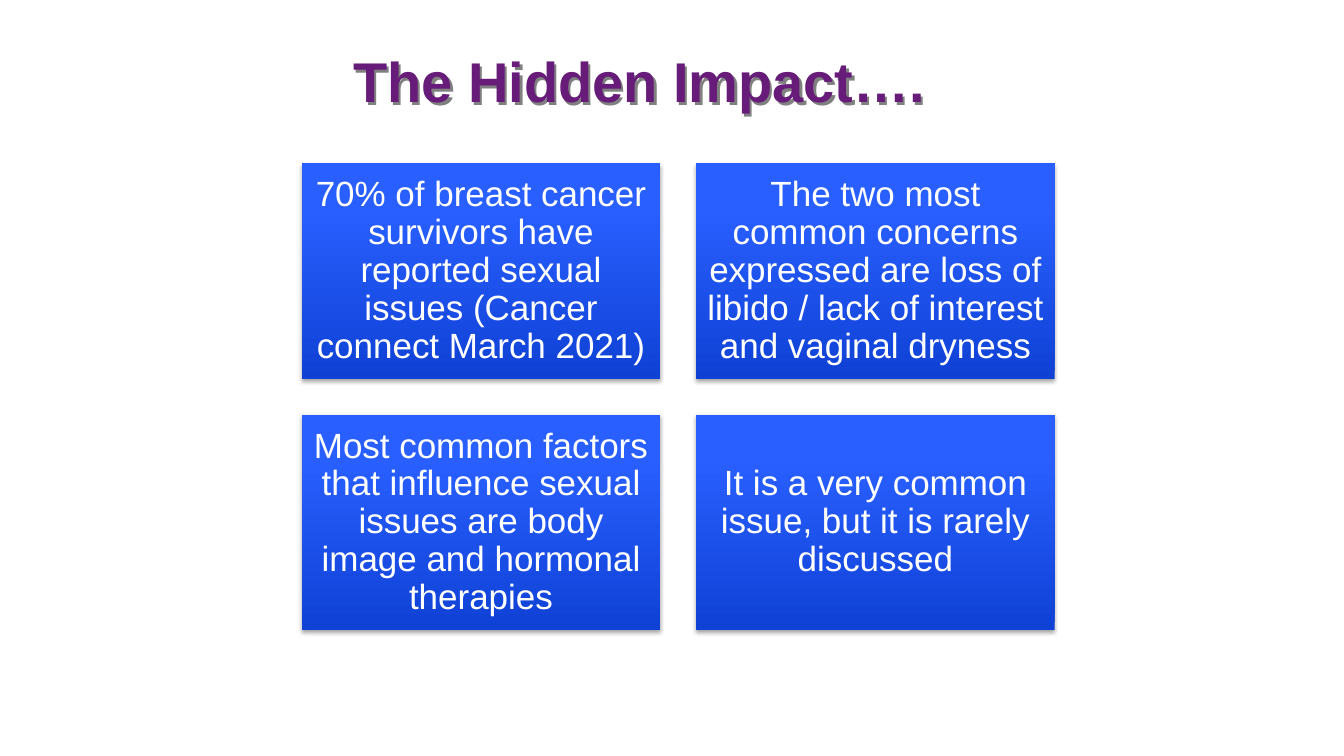
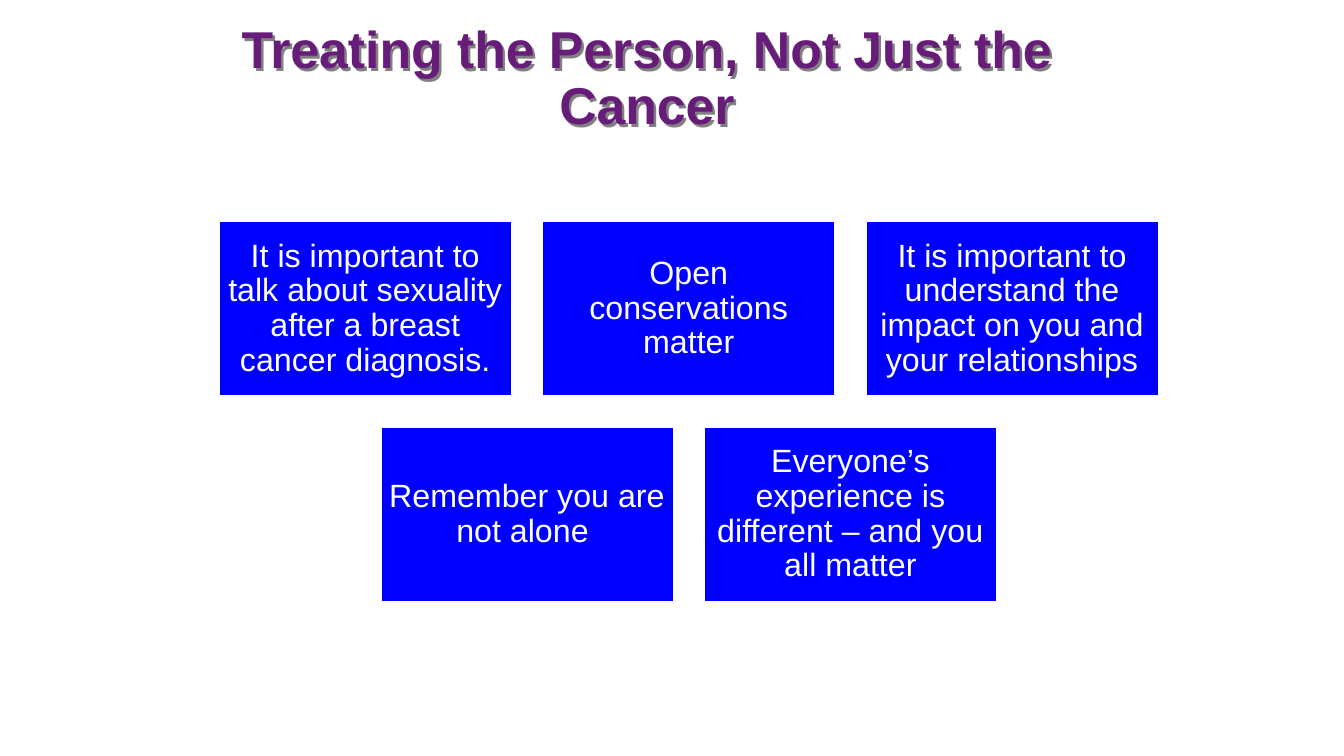
from pptx import Presentation
from pptx.dml.color import RGBColor
from pptx.enum.shapes import MSO_SHAPE as Kind
from pptx.enum.text import MSO_ANCHOR as Anchor, PP_ALIGN as Align
from pptx.oxml import parse_xml as to_xml
from pptx.oxml.ns import nsdecls
from pptx.util import Cm, Pt

PLUM, WHITE, BLUE, BLACK, GREY = "661C78", "FFFFFF", "0000FF", "000000", "808080"
FADE = [(0, "0F41D5"), (80, "295FFF"), (100, "2B60FF")]
TITLE = {"name": "Arial", "bold": True}
BODY = {"name": "Arial", "bold": False}
DECK = [
    {
        "title": "The Hidden Impact…. ", "size": 40, "lead": 1,
        "mid": 17.09, "top": 4.12, "wide": 9.04, "high": 5.43, "gap": 0.9,
        "font": 25, "inset": 0.24, "fade": True,
        "rows": [
            ["70% of breast cancer survivors have reported sexual issues (Cancer connect March 2021)",
             "The two most common concerns expressed are loss of libido / lack of interest and vaginal dryness"],
            ["Most common factors that influence sexual issues are body image and hormonal therapies",
             "It is a very common issue, but it is rarely discussed"],
        ],
    },
    {
        "title": "Treating the Person, Not Just the Cancer", "size": 37, "lead": 0.9,
        "mid": 17.36, "top": 5.56, "wide": 7.41, "high": 4.44, "gap": 0.74,
        "font": 23, "inset": 0.18, "fade": False,
        "rows": [
            ["It is important to talk about sexuality after a breast cancer diagnosis.",
             "Open conservations matter",
             "It is important to understand the impact on you and your relationships"],
            ["Remember you are not alone ",
             "Everyone’s experience is different – and you all matter"],
        ],
    },
]


def write(shape, text, style, size, tone, lead, inset):
    frame = shape.text_frame
    look = {"word_wrap": True, "vertical_anchor": Anchor.MIDDLE,
            "margin_left": Cm(inset), "margin_right": Cm(inset),
            "margin_top": Cm(inset), "margin_bottom": Cm(inset)}
    para = frame.paragraphs[0]
    para.text = text
    flow = {"alignment": Align.CENTER, "line_spacing": lead}
    face = {**style, "size": Pt(size)}
    for part, values in ((frame, look), (para, flow), (para.runs[0].font, face)):
        for key, value in values.items():
            setattr(part, key, value)
    para.runs[0].font.color.rgb = RGBColor.from_string(tone)


def shade(shape, tone, alpha, blur, dist, angle):
    shape.shadow.inherit = False
    shape._element.spPr.find("{*}effectLst").append(to_xml(
        f'<a:outerShdw {nsdecls("a")} blurRad="{Pt(blur)}" dist="{Pt(dist)}" '
        f'dir="{angle * 60000}" algn="tl" rotWithShape="0"><a:srgbClr val="{tone}">'
        f'<a:alpha val="{alpha * 1000}"/></a:srgbClr></a:outerShdw>'))


deck = Presentation()
deck.slide_width, deck.slide_height = Cm(33.87), Cm(19.05)
stops = "".join(f'<a:gs pos="{pos * 1000}"><a:srgbClr val="{tone}"/></a:gs>' for pos, tone in FADE)

for page in DECK:
    slide = deck.slides.add_slide(deck.slide_layouts[6])
    title = slide.shapes.add_textbox(Cm(5.51), Cm(0.43), Cm(21.59), Cm(3.18))
    write(title, page["title"], TITLE, page["size"], PLUM, page["lead"], 0.13)
    shade(title, GREY, 100, 0, 2.5, 45)

    wide, high, gap = page["wide"], page["high"], page["gap"]
    for i, row in enumerate(page["rows"]):
        left = page["mid"] - (len(row) * (wide + gap) - gap) / 2
        top = page["top"] + i * (high + gap)
        for j, text in enumerate(row):
            card = slide.shapes.add_shape(
                Kind.RECTANGLE, Cm(left + j * (wide + gap)), Cm(top), Cm(wide), Cm(high))
            card.shadow.inherit = False
            if page["fade"]:
                card.fill.background()
                props = card._element.spPr
                props.replace(props.find("{*}noFill"), to_xml(
                    f'<a:gradFill {nsdecls("a")} rotWithShape="1"><a:gsLst>{stops}</a:gsLst>'
                    '<a:lin ang="16200000" scaled="0"/></a:gradFill>'))
                card.line.fill.background()
                shade(card, BLACK, 35, 3.1, 1.8, 90)
            else:
                card.fill.solid()
                card.fill.fore_color.rgb = RGBColor.from_string(BLUE)
                card.line.color.rgb = RGBColor.from_string(WHITE)
                card.line.width = Pt(2)
            write(card, text, BODY, page["font"], WHITE, 0.9, page["inset"])

deck.save("out.pptx")
